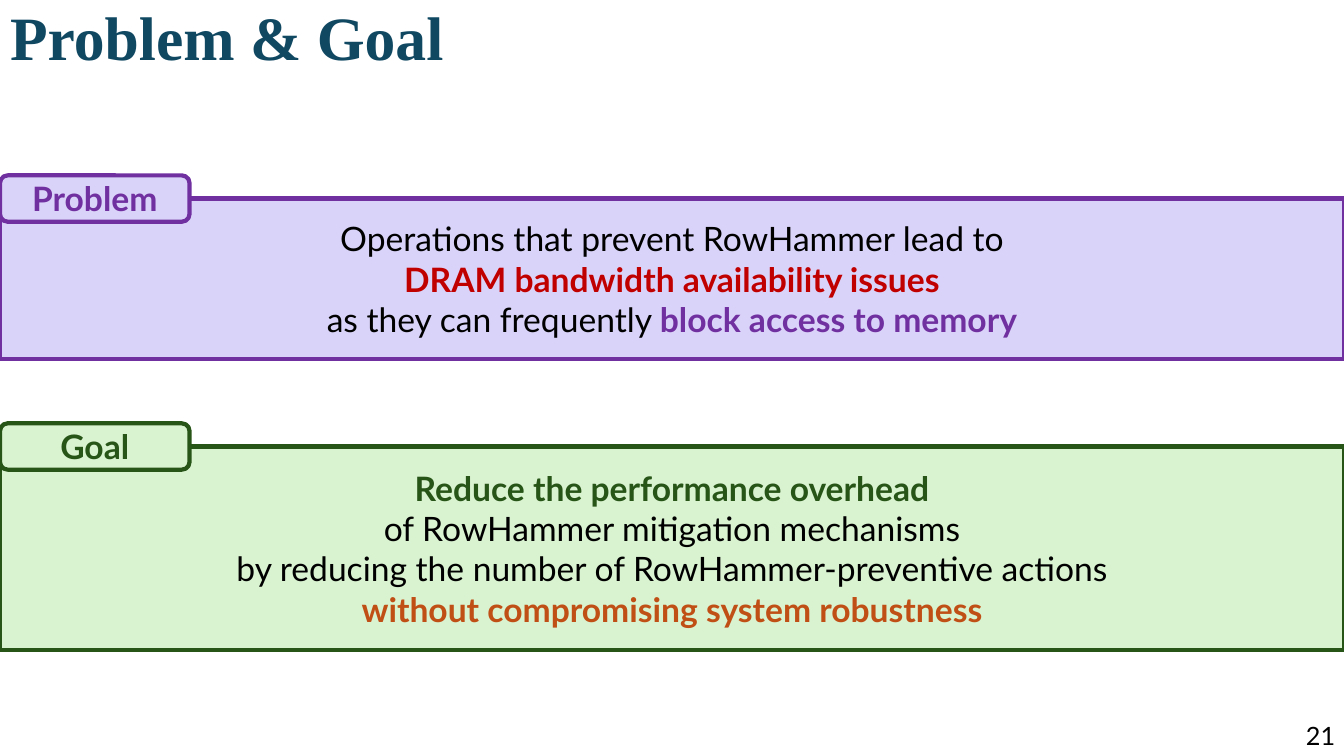
from pptx import Presentation
from pptx import util as u
from pptx.dml.color import RGBColor
from pptx.enum import shapes, text

BLACK = RGBColor(0x00, 0x00, 0x00)
TEAL = RGBColor(0x10, 0x48, 0x62)
PURPLE = RGBColor(0x70, 0x30, 0xA0)
LILAC = RGBColor(0xDA, 0xD3, 0xF9)
GREEN = RGBColor(0x27, 0x54, 0x17)
MINT = RGBColor(0xD9, 0xF2, 0xD0)
RED = RGBColor(0xC0, 0x00, 0x00)
ORANGE = RGBColor(0xC0, 0x4F, 0x15)

WIDTH = 13.33
BREAK = None
BODY_FONT = "Lato"


class SlideBuilder:
    def __init__(self, prs):
        self.s = prs.slides.add_slide(prs.slide_layouts[5])

    def style(self, r, size, color, bold=False, font=BODY_FONT):
        r.font.name, r.font.size = font, u.Pt(size)
        r.font.bold, r.font.color.rgb = bold, color

    def title(self, words):
        sp = self.s.shapes.title
        sp.left, sp.top = u.Inches(0), u.Inches(0)
        sp.width, sp.height = u.Inches(WIDTH), u.Inches(0.8)
        tf = sp.text_frame
        tf.text = words
        tf.auto_size = text.MSO_AUTO_SIZE.NONE
        tf.vertical_anchor = text.MSO_ANCHOR.MIDDLE
        p = tf.paragraphs[0]
        p.alignment, p.line_spacing = text.PP_ALIGN.LEFT, 0.9
        self.style(p.runs[0], 44, TEAL, True, "Times New Roman")

    def page_number(self, number):
        box = (12.59, 7.1, 0.75, 0.4)
        tf = self.s.shapes.add_textbox(*map(u.Inches, box)).text_frame
        tf.text = number
        tf.word_wrap = True
        p = tf.paragraphs[0]
        p.alignment = text.PP_ALIGN.RIGHT
        self.style(p.runs[0], 18, BLACK)

    def box(self, group, kind, box, fill, accent, paragraphs):
        """Add a framed box; pieces of text that are not black are bold."""
        sp = group.shapes.add_shape(kind, *map(u.Inches, box))
        sp.shadow.inherit = False
        sp.fill.solid()
        sp.fill.fore_color.rgb = fill
        sp.line.color.rgb, sp.line.width = accent, u.Pt(3)
        tf = sp.text_frame
        tf.word_wrap = True
        tf.vertical_anchor = text.MSO_ANCHOR.MIDDLE
        for i, pieces in enumerate(paragraphs):
            p = tf.add_paragraph() if i else tf.paragraphs[0]
            p.alignment = text.PP_ALIGN.CENTER
            for piece in pieces:
                if piece is BREAK:
                    p.add_line_break()
                    continue
                words, color = piece
                r = p.add_run()
                r.text = words
                self.style(r, 24, color, color != BLACK)

    def panel(self, name, top, height, fill, accent, paragraphs):
        """Add a full-width panel with a name tab straddling its top edge."""
        group = self.s.shapes.add_group_shape()
        self.box(group, shapes.MSO_SHAPE.RECTANGLE, (0, top, WIDTH, height),
                 fill, accent, paragraphs)
        self.box(group, shapes.MSO_SHAPE.ROUNDED_RECTANGLE,
                 (0, top - 0.23, 1.88, 0.46), fill, accent, [[(name, accent)]])


def main():
    prs = Presentation()
    prs.slide_width, prs.slide_height = u.Inches(WIDTH), u.Inches(7.5)
    slide = SlideBuilder(prs)
    slide.page_number("21")
    slide.title("Problem & Goal")
    slide.panel("Problem", 1.97, 1.59, LILAC, PURPLE, [
        [("Operations that prevent RowHammer lead to", BLACK)],
        [("DRAM bandwidth availability issues", RED)],
        [("as they can frequently ", BLACK), ("block access to memory", PURPLE)],
    ])
    slide.panel("Goal", 4.43, 2.02, MINT, GREEN, [
        [("Reduce the performance overhead", GREEN), BREAK,
         ("of RowHammer mitigation mechanisms", BLACK), BREAK,
         ("by reducing the number of RowHammer-preventive actions", BLACK)],
        [("without compromising system robustness", ORANGE)],
    ])
    prs.save("out.pptx")


if __name__ == "__main__":
    main()
